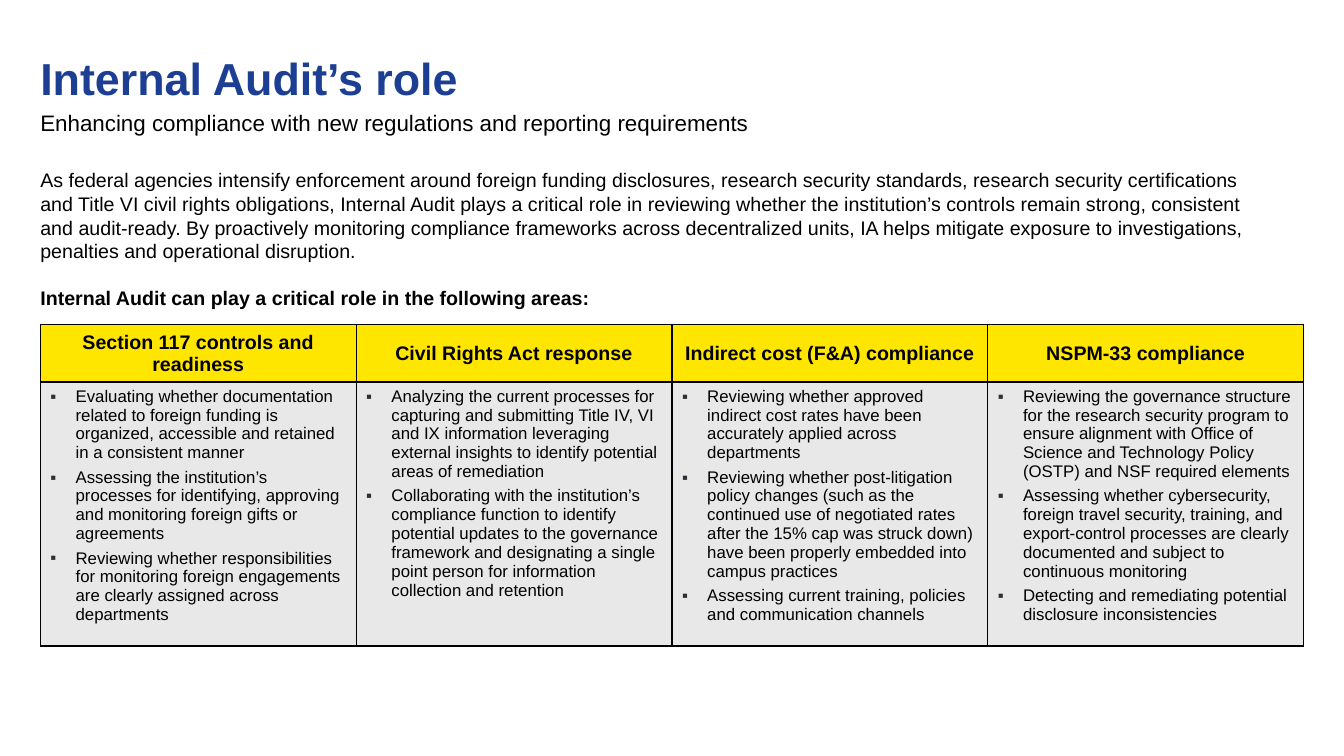
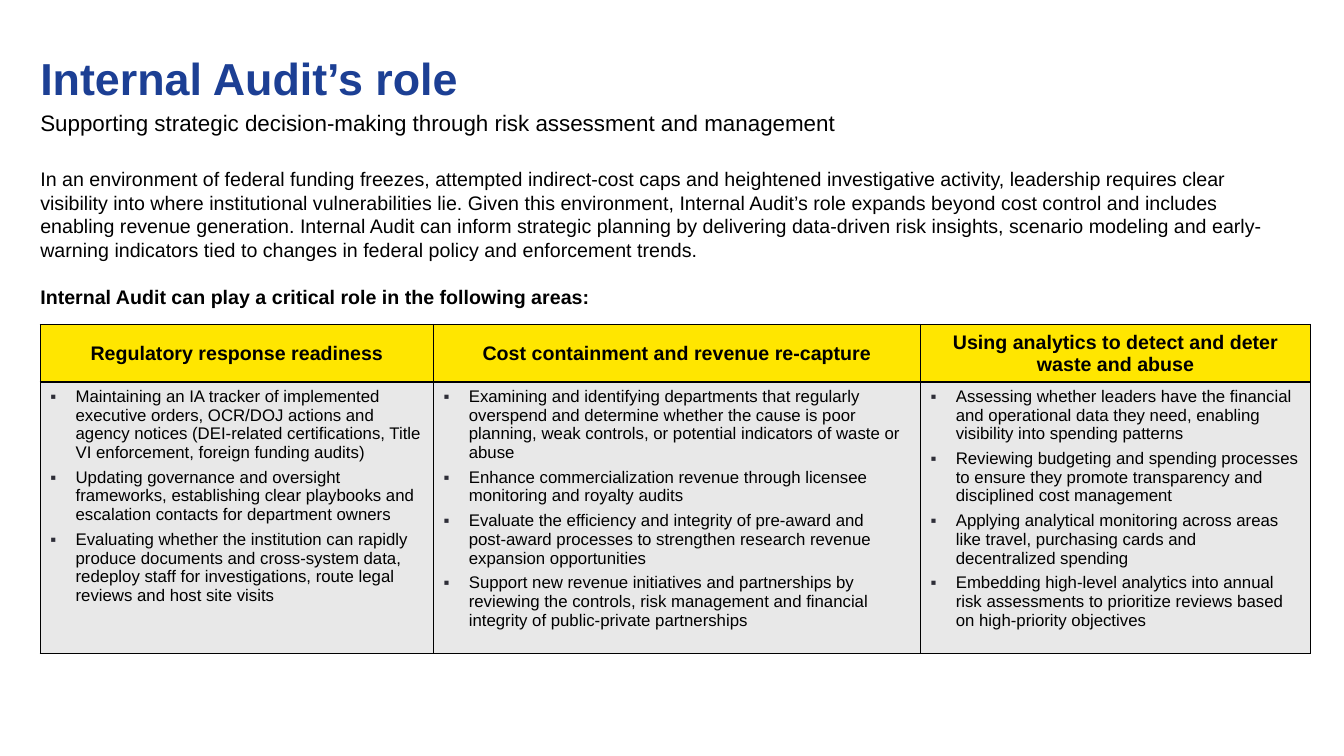
from lxml import etree
from pptx import Presentation
from pptx import util as u
from pptx.dml.color import RGBColor
from pptx.enum import text
from pptx.oxml.ns import qn

BLUE, BLACK, YELLOW, GREY, BULLET = "1C3F94", "000000", "FFE600", "E8E8E8", "2E2E38"
LEFT = 0.4
TITLE = "Internal Audit’s role"
LEAD_IN = "Internal Audit can play a critical role in the following areas:"
TITLE_FONT = {"size": u.Pt(32), "bold": True}
SUBTITLE_FONT = {"size": u.Pt(16), "bold": False}
INTRO_FONT = {"size": u.Pt(14), "bold": False}
HEADING_FONT = {"size": u.Pt(14), "bold": True}
DUTY_FONT = {"size": u.Pt(12), "bold": False}

SLIDES = [
    {
        "subtitle": "Enhancing compliance with new regulations and reporting requirements",
        "intro": "As federal agencies intensify enforcement around foreign funding disclosures, research security standards, research security certifications and Title VI civil rights obligations, Internal Audit plays a critical role in reviewing whether the institution’s controls remain strong, consistent and audit‑ready. By proactively monitoring compliance frameworks across decentralized units, IA helps mitigate exposure to investigations, penalties and operational disruption.",
        "intro_top": 1.67,
        "widths": [12.53 / 4] * 4,
        "body_height": 2.62,
        "areas": {
            "Section 117 controls and readiness": [
                "Evaluating whether documentation related to foreign funding is organized, accessible and retained in a consistent manner",
                "Assessing the institution’s processes for identifying, approving and monitoring foreign gifts or agreements",
                "Reviewing whether responsibilities for monitoring foreign engagements are clearly assigned across departments",
            ],
            "Civil Rights Act response": [
                "Analyzing the current processes for capturing and submitting Title IV, VI and IX information leveraging external insights to identify potential areas of remediation",
                "Collaborating with the institution’s compliance function to identify potential updates to the governance framework and designating a single point person for information collection and retention",
            ],
            "Indirect cost (F&A) compliance": [
                "Reviewing whether approved indirect cost rates have been accurately applied across departments",
                "Reviewing whether post‑litigation policy changes (such as the continued use of negotiated rates after the 15% cap was struck down) have been properly embedded into campus practices",
                "Assessing current training, policies and communication channels",
            ],
            "NSPM-33 compliance": [
                "Reviewing the governance structure for the research security program to ensure alignment with Office of Science and Technology Policy (OSTP) and NSF required elements",
                "Assessing whether cybersecurity, foreign travel security, training, and export‑control processes are clearly documented and subject to continuous monitoring",
                "Detecting and remediating potential disclosure inconsistencies",
            ],
        },
    },
    {
        "subtitle": "Supporting strategic decision-making through risk assessment and management",
        "intro": "In an environment of federal funding freezes, attempted indirect‑cost caps and heightened investigative activity, leadership requires clear visibility into where institutional vulnerabilities lie. Given this environment, Internal Audit’s role expands beyond cost control and includes enabling revenue generation. Internal Audit can inform strategic planning by delivering data‑driven risk insights, scenario modeling and early-warning indicators tied to changes in federal policy and enforcement trends.",
        "intro_top": 1.66,
        "widths": [3.9, 4.83, 3.87],
        "body_height": 2.69,
        "areas": {
            "Regulatory response readiness": [
                "Maintaining an IA tracker of implemented executive orders, OCR/DOJ actions and agency notices (DEI‑related certifications, Title VI enforcement, foreign funding audits)",
                "Updating governance and oversight frameworks, establishing clear playbooks and escalation contacts for department owners",
                "Evaluating whether the institution can rapidly produce documents and cross‑system data, redeploy staff for investigations, route legal reviews and host site visits",
            ],
            "Cost containment and revenue re-capture": [
                "Examining and identifying departments that regularly overspend and determine whether the cause is poor planning, weak controls, or potential indicators of waste or abuse",
                "Enhance commercialization revenue through licensee monitoring and royalty audits",
                "Evaluate the efficiency and integrity of pre‑award and post‑award processes to strengthen research revenue expansion opportunities",
                "Support new revenue initiatives and partnerships by reviewing the controls, risk management and financial integrity of public‑private partnerships",
            ],
            "Using analytics to detect and deter waste and abuse": [
                "Assessing whether leaders have the financial and operational data they need, enabling visibility into spending patterns",
                "Reviewing budgeting and spending processes to ensure they promote transparency and disciplined cost management",
                "Applying analytical monitoring across areas like travel, purchasing cards and decentralized spending",
                "Embedding high‑level analytics into annual risk assessments to prioritize reviews based on high-priority objectives",
            ],
        },
    },
]


def paint(target, color):
    """Give a font colour or a solid fill's colour its hex value."""
    target.rgb = RGBColor.from_string(color)


def set_all(target, values):
    """Set every attribute in values on target."""
    for name, value in values.items():
        setattr(target, name, value)


def write(paragraph, words, font, color=BLACK, **layout):
    """Write one run of words into a paragraph."""
    set_all(paragraph, layout)
    run = paragraph.add_run()
    run.text = words
    set_all(run.font, {"name": "Arial", **font})
    paint(run.font.color, color)


def add_frame(slide, box, pad, anchor=text.MSO_ANCHOR.TOP):
    """Add a wrapping text box and return its text frame."""
    frame = slide.shapes.add_textbox(*map(u.Inches, box)).text_frame
    set_all(frame, {"word_wrap": True, "vertical_anchor": anchor,
                    "margin_left": 0, "margin_right": 0,
                    "margin_top": u.Inches(pad), "margin_bottom": u.Inches(pad)})
    return frame


def add_heading(slide, subtitle):
    """Place the shared title and the slide's subtitle."""
    title = add_frame(slide, (LEFT, 0.4, 7.4, 0.73), 0.05, text.MSO_ANCHOR.MIDDLE)
    write(title.paragraphs[0], TITLE, TITLE_FONT, BLUE)
    line = add_frame(slide, (LEFT, 1.06, 10, 0.5), 0.05)
    write(line.paragraphs[0], subtitle, SUBTITLE_FONT, line_spacing=0.9)


def add_intro(slide, box, intro):
    """Place the introduction and the line that leads to the table."""
    frame = add_frame(slide, box, 0)
    write(frame.paragraphs[0], intro, INTRO_FONT)
    write(frame.add_paragraph(), LEAD_IN, HEADING_FONT, space_before=u.Pt(17))


def add_bullet(paragraph):
    """Give a paragraph a hanging square bullet."""
    props = paragraph._p.get_or_add_pPr()
    indent = u.Inches(0.25)
    props.set("marL", str(indent))
    props.set("indent", str(-indent))
    color = etree.SubElement(props, qn("a:buClr"))
    etree.SubElement(color, qn("a:srgbClr"), val=BULLET)
    etree.SubElement(props, qn("a:buFont"), typeface="Arial")
    etree.SubElement(props, qn("a:buChar"), char="▪")


def style_cell(cell, color):
    """Draw a cell's four borders and its fill."""
    props = cell._tc.get_or_add_tcPr()
    for side in "LRTB":
        line = etree.SubElement(props, qn(f"a:ln{side}"), w=str(u.Pt(1)))
        fill = etree.SubElement(line, qn("a:solidFill"))
        etree.SubElement(fill, qn("a:srgbClr"), val=BLACK)
    cell.fill.solid()
    paint(cell.fill.fore_color, color)


def add_areas(slide, left, top, widths, heights, areas):
    """Place the table of areas, one column each, with duties below."""
    size = (sum(widths), sum(heights))
    table = slide.shapes.add_table(2, len(areas), *map(u.Inches, (left, top, *size))).table
    set_all(table, {"first_row": False, "horz_banding": False})
    for row, height in zip(table.rows, heights):
        row.height = u.Inches(height)
    for index, (area, duties) in enumerate(areas.items()):
        table.columns[index].width = u.Inches(widths[index])
        head, body = table.cell(0, index), table.cell(1, index)
        style_cell(head, YELLOW)
        style_cell(body, GREY)
        head.vertical_anchor = text.MSO_ANCHOR.MIDDLE
        write(head.text_frame.paragraphs[0], area, HEADING_FONT,
              alignment=text.PP_ALIGN.CENTER)
        frame = body.text_frame
        for number, duty in enumerate(duties):
            paragraph = frame.add_paragraph() if number else frame.paragraphs[0]
            add_bullet(paragraph)
            write(paragraph, duty, DUTY_FONT, space_after=u.Pt(4))


def add_role_slide(deck, content):
    """Build one slide on the role of Internal Audit."""
    slide = deck.slides.add_slide(deck.slide_layouts[6])
    add_heading(slide, content["subtitle"])
    add_intro(slide, (LEFT, content["intro_top"], 12.19, 1.41), content["intro"])
    add_areas(slide, LEFT, 3.22, content["widths"],
              (0.57, content["body_height"]), content["areas"])


def main():
    """Build and save the deck."""
    deck = Presentation()
    set_all(deck, {"slide_width": u.Inches(13.33), "slide_height": u.Inches(7.5)})
    for content in SLIDES:
        add_role_slide(deck, content)
    deck.save("out.pptx")


if __name__ == "__main__":
    main()
